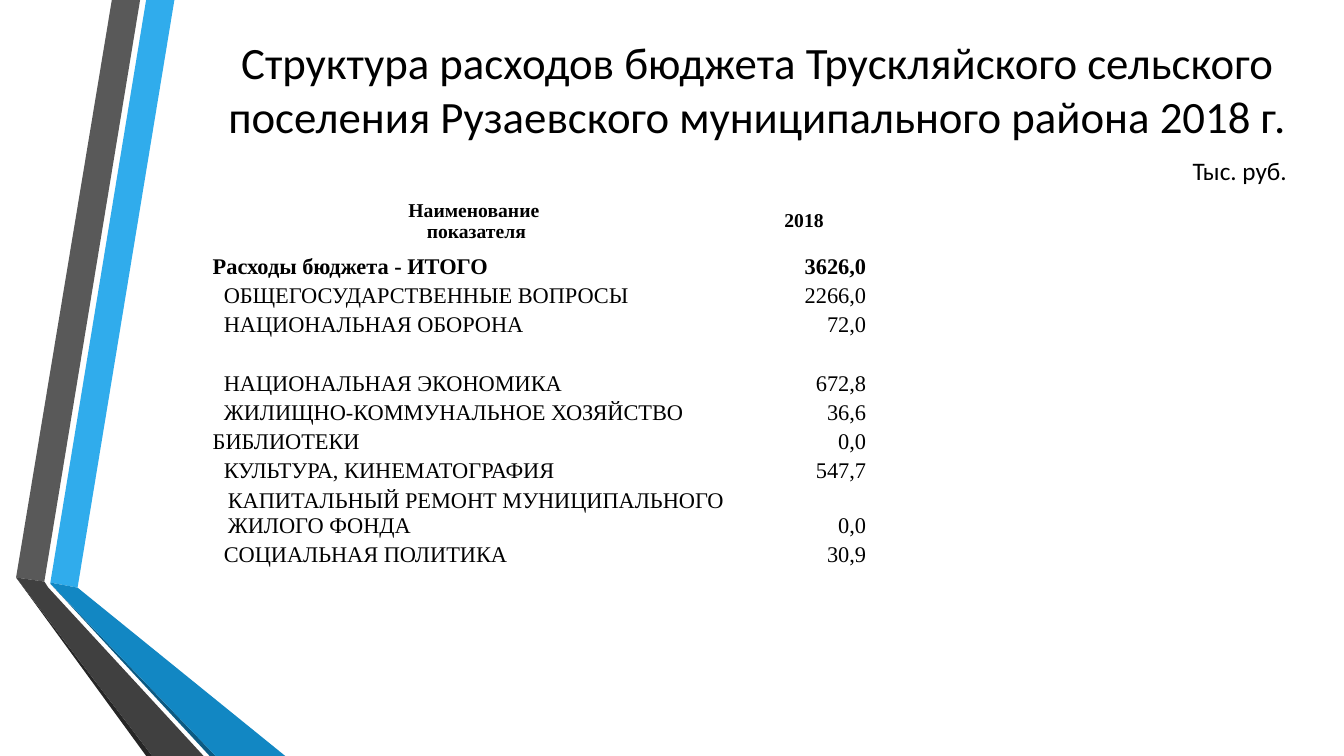
from dataclasses import dataclass

from lxml.etree import SubElement
from pptx import Presentation
from pptx.dml.color import RGBColor
from pptx.enum.text import MSO_ANCHOR, PP_ALIGN
from pptx.oxml.ns import qn
from pptx.util import Inches, Pt

BLACK, WHITE = "000000", "FFFFFF"
SANS, SERIF = "Calibri", "Times New Roman"


@dataclass
class Ribbon:
    color: str
    points: list[tuple[float, float]]


@dataclass
class BudgetRow:
    label: str
    value: str
    indent: float = 0.12
    bold: bool = False
    height: float = 0.29


RIBBONS = [
    Ribbon("30ACEC", [(0.5, 5.78), (0.77, 5.83), (1.73, 0), (1.45, 0)]),
    Ribbon("595959", [(1.39, 0), (1.11, 0), (0.16, 5.73), (0.44, 5.77)]),
    Ribbon("262626", [(0.16, 5.73), (1.45, 7.5), (1.51, 7.5)]),
    Ribbon("0C5A82", [(0.5, 5.79), (2.08, 7.5), (2.14, 7.5)]),
    Ribbon("1287C3", [(0.5, 5.78), (0.5, 5.79), (2.14, 7.5), (2.83, 7.5), (0.77, 5.83)]),
    Ribbon("404040", [(2.02, 7.5), (0.48, 5.83), (0.44, 5.77), (0.16, 5.73), (1.51, 7.5)]),
]

BUDGET = [
    BudgetRow("Расходы бюджета - ИТОГО", "3626,0", 0.01, bold=True),
    BudgetRow("ОБЩЕГОСУДАРСТВЕННЫЕ ВОПРОСЫ", "2266,0"),
    BudgetRow("НАЦИОНАЛЬНАЯ ОБОРОНА", "72,0"),
    BudgetRow("НАЦИОНАЛЬНАЯ ЭКОНОМИКА", "672,8", height=0.58),
    BudgetRow("ЖИЛИЩНО-КОММУНАЛЬНОЕ ХОЗЯЙСТВО", "36,6"),
    BudgetRow("БИБЛИОТЕКИ", "0,0", 0.01),
    BudgetRow("КУЛЬТУРА, КИНЕМАТОГРАФИЯ", "547,7"),
    BudgetRow("КАПИТАЛЬНЫЙ РЕМОНТ МУНИЦИПАЛЬНОГО ЖИЛОГО ФОНДА", "0,0", 0.16, height=0.5),
    BudgetRow("СОЦИАЛЬНАЯ ПОЛИТИКА", "30,9"),
]


def rgb(color: str) -> RGBColor:
    return RGBColor.from_string(color)


def add_span(para, text: str, size: int, font: str, bold: bool = False) -> None:
    span = para.add_run()
    span.text = text
    span.font.size = Pt(size)
    span.font.name = font
    span.font.bold = bold
    span.font.color.rgb = rgb(BLACK)


def draw_ribbon(page, ribbon: Ribbon) -> None:
    start, *others = [(Inches(x), Inches(y)) for x, y in ribbon.points]
    builder = page.shapes.build_freeform(*start, scale=1.0)
    builder.add_line_segments(others, close=True)
    shape = builder.convert_to_shape()
    shape.shadow.inherit = False
    shape.fill.solid()
    shape.fill.fore_color.rgb = rgb(ribbon.color)
    shape.line.fill.background()


def draw_text(page, area: tuple[float, float, float, float], text: str, size: int,
              align: PP_ALIGN, wrap: bool) -> None:
    box = page.shapes.add_textbox(*map(Inches, area))
    frame = box.text_frame
    frame.word_wrap = wrap
    frame.vertical_anchor = MSO_ANCHOR.MIDDLE
    para = frame.paragraphs[0]
    para.alignment = align
    add_span(para, text, size, SANS)


def fill_cell(cell, lines: list[str], size: int, bold: bool, align: PP_ALIGN,
              anchor: MSO_ANCHOR, indent: float = 0.01) -> None:
    cell.margin_left = Inches(indent)
    cell.margin_right = cell.margin_top = Inches(0.01)
    cell.margin_bottom = 0
    cell.vertical_anchor = anchor
    para = cell.text_frame.paragraphs[0]
    para.alignment = align
    for number, line in enumerate(lines):
        if number:
            para.add_line_break()
        add_span(para, line, size, SERIF, bold)
    # Thin white borders come before the fill in the cell properties
    properties = cell._tc.get_or_add_tcPr()
    for side in ("a:lnL", "a:lnR", "a:lnT", "a:lnB"):
        border = SubElement(properties, qn(side), w=str(Pt(1)))
        solid = SubElement(border, qn("a:solidFill"))
        SubElement(solid, qn("a:srgbClr"), val=WHITE)
    cell.fill.background()


def draw_budget(page, rows: list[BudgetRow]) -> None:
    header_height = 0.58
    height = header_height + sum(row.height for row in rows)
    frame = page.shapes.add_table(len(rows) + 1, 2, Inches(2.1), Inches(1.9),
                                  Inches(6.5), Inches(height))
    table = frame.table
    table.first_row = table.horz_banding = False
    for column, width in zip(table.columns, (5.25, 1.25)):
        column.width = Inches(width)

    # Header
    table.rows[0].height = Inches(header_height)
    for index, lines in enumerate((["Наименование ", "показателя"], ["2018"])):
        fill_cell(table.cell(0, index), lines, 14, True, PP_ALIGN.CENTER, MSO_ANCHOR.MIDDLE)

    # Expense lines
    for index, row in enumerate(rows, start=1):
        table.rows[index].height = Inches(row.height)
        fill_cell(table.cell(index, 0), [row.label], 16, row.bold,
                  PP_ALIGN.LEFT, MSO_ANCHOR.BOTTOM, row.indent)
        fill_cell(table.cell(index, 1), [row.value], 16, row.bold,
                  PP_ALIGN.RIGHT, MSO_ANCHOR.BOTTOM)


def main() -> None:
    deck = Presentation()
    deck.slide_width, deck.slide_height = Inches(13.33), Inches(7.5)
    page = deck.slides.add_slide(deck.slide_layouts[6])

    # Folded ribbons on the left
    for ribbon in RIBBONS:
        draw_ribbon(page, ribbon)

    # Title, table and unit
    draw_text(page, (1.82, 0.19, 11.39, 1.38),
              "Структура расходов бюджета Трускляйского сельского поселения "
              "Рузаевского муниципального района 2018 г.", 32, PP_ALIGN.CENTER, True)
    draw_budget(page, BUDGET)
    draw_text(page, (11.73, 1.49, 1.17, 0.4), "Тыс. руб.", 18, PP_ALIGN.LEFT, False)

    deck.save("out.pptx")


if __name__ == "__main__":
    main()
